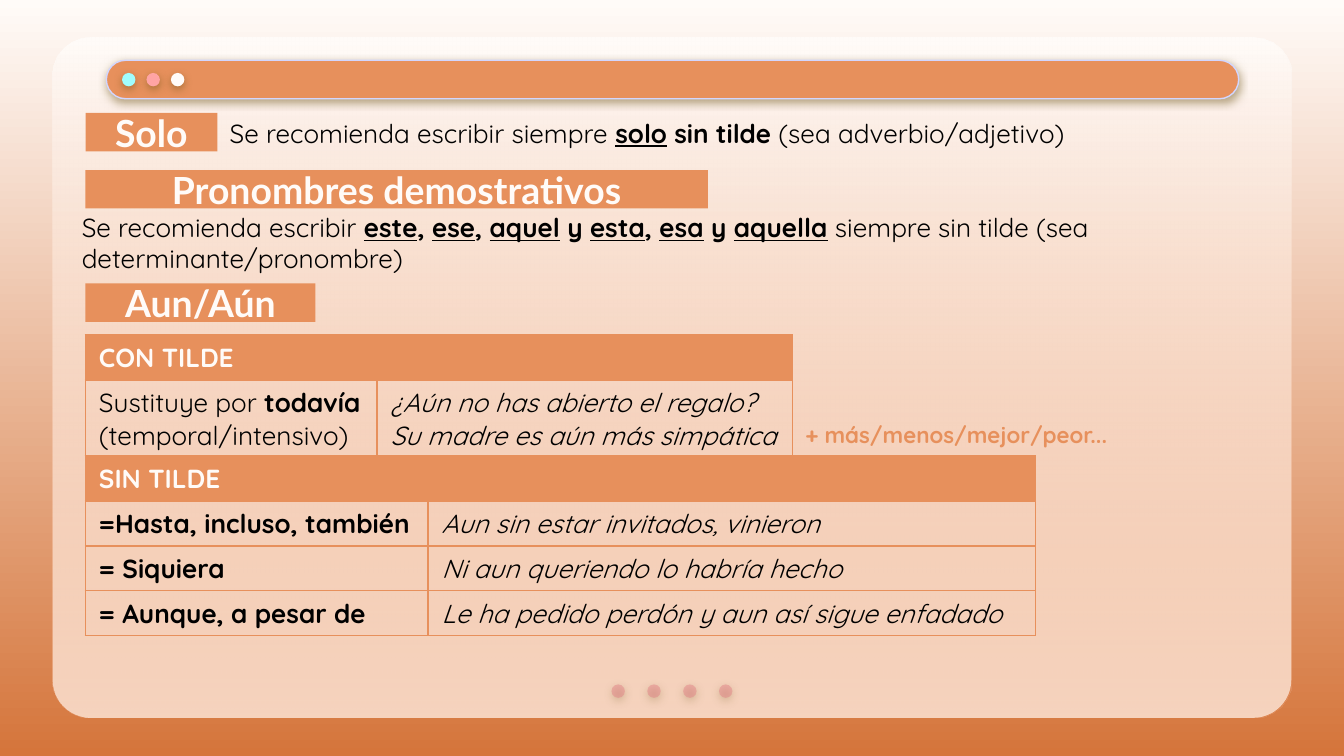
import pptx
import pptx.dml.color
import pptx.enum.shapes
import pptx.enum.text
import pptx.oxml
import pptx.util

Pt = pptx.util.Pt
RGB = pptx.dml.color.RGBColor.from_string
SHAPES = pptx.enum.shapes.MSO_SHAPE
TEXT = pptx.enum.text
NS = 'xmlns:a="http://schemas.openxmlformats.org/drawingml/2006/main"'
COLORS = {"cream": "FFFBF8", "orange": "E7905C", "rust": "D5753B", "rose": "E27B83",
          "cyan": "A0FDFD", "pink": "FFA4A4", "lilac": "D2D6FF", "brown": "6D5416",
          "black": "000000"}
STYLES = {"b": "bold", "i": "italic", "u": "underline"}
SHADOW = (f'<a:effectLst {NS}><a:outerShdw blurRad="57150" dist="19050" dir="5400000" '
          f'algn="bl" rotWithShape="0"><a:srgbClr val="{COLORS["brown"]}">'
          '<a:alpha val="50000"/></a:srgbClr></a:outerShdw></a:effectLst>')

prs = pptx.Presentation()
prs.slide_width, prs.slide_height = Pt(720), Pt(405)
slide = prs.slides.add_slide(prs.slide_layouts[6])


def add_block(kind, box, color, shadow=False, alpha=None):
    block = slide.shapes.add_shape(kind, *map(Pt, box))
    block.fill.solid()
    block.fill.fore_color.rgb = RGB(COLORS[color])
    block.line.fill.background()
    if alpha:
        tint = block._element.spPr.find(".//{*}srgbClr")
        tint.append(pptx.oxml.parse_xml(f'<a:alpha {NS} val="{alpha * 1000}"/>'))
    if shadow:
        block._element.spPr.append(pptx.oxml.parse_xml(SHADOW))
    else:
        block.shadow.inherit = False
    return block


def write(frame, paragraphs, color="black", size=14, font="Quicksand"):
    """Each paragraph is a list of (text, style letters)."""
    for number, runs in enumerate(paragraphs):
        paragraph = frame.paragraphs[0] if number == 0 else frame.add_paragraph()
        for text, letters in runs:
            run = paragraph.add_run()
            run.text = text
            run.font.color.rgb = RGB(COLORS[color])
            looks = {"size": Pt(size), "name": font}
            looks.update((STYLES[letter], True) for letter in letters)
            for name, value in looks.items():
                setattr(run.font, name, value)


# Background and window panel
panel_box = (28.2, 20.1, 663.6, 364.5)
panels = [add_block(SHAPES.ROUNDED_RECTANGLE, panel_box, "cream") for _ in range(2)]
for panel in panels:
    panel.adjustments[0] = 0.056
glow = panels[1]
for fill, end in ((slide.background.fill, "rust"), (glow.fill, "orange")):
    fill.gradient()
    fill.gradient_angle = 270
    for stop, color in zip(fill.gradient_stops, ("cream", end)):
        stop.color.rgb = RGB(COLORS[color])
glow_end = glow._element.spPr.findall(".//{*}srgbClr")[-1]
glow_end.append(pptx.oxml.parse_xml(f'<a:alpha {NS} val="37000"/>'))

# Page dots, title bar and window buttons
for step in range(4):
    add_block(SHAPES.OVAL, (327.6 + 19.2 * step, 366.7, 7.2, 7.2), "rose", True, 44)
title_bar = add_block(SHAPES.ROUNDED_RECTANGLE, (57, 32.3, 606.6, 20.6), "orange", True)
title_bar.adjustments[0] = 0.5
title_bar.line.color.rgb = RGB(COLORS["lilac"])
title_bar.line.width = Pt(0.75)
for step, color in enumerate(("cyan", "pink", "cream")):
    add_block(SHAPES.OVAL, (65.4 + 13.1 * step, 39.1, 7.2, 7.2), color, True)

# Section headings
for heading, top, width in (("Solo", 60.5, 70.6),
                            ("Pronombres demostrativos", 91.1, 333.4),
                            ("Aun/Aún", 151.8, 123.2)):
    frame = add_block(SHAPES.RECTANGLE, (45.8, top, width, 20.6), "orange").text_frame
    layout = {"vertical_anchor": TEXT.MSO_ANCHOR.MIDDLE, "word_wrap": True}
    layout.update((f"margin_{side}", Pt(7.2)) for side in ("left", "top", "right", "bottom"))
    for name, value in layout.items():
        setattr(frame, name, value)
    write(frame, [[(heading, "b")]], "cream", 20, "Lato")
    frame.paragraphs[0].alignment = TEXT.PP_ALIGN.CENTER

# Rules and side note
solo_rule = [("Se recomienda escribir siempre ", ""), ("solo", "bu"), (" sin tilde", "b"),
             (" (sea adverbio/adjetivo)", "")]
pronoun_rule = [("Se recomienda escribir ", "")]
for pronoun, joint in (("este", ", "), ("ese", ", "), ("aquel", " y "),
                       ("esta", ", "), ("esa", " y "), ("aquella", " ")):
    pronoun_rule += [(pronoun, "bu"), (joint, "b")]
pronoun_rule.append(("siempre sin tilde (sea determinante/pronombre)", ""))
side_note = [("+ más/menos/mejor/peor...", "b")]
for box, runs, wrap, color, size in (
        ((116, 59.2, 474.5, 24.2), solo_rule, False, "black", 14),
        ((36.7, 109.7, 618.5, 41.2), pronoun_rule, True, "black", 14),
        ((424.4, 222.3, 180.7, 21.8), side_note, False, "orange", 12)):
    frame = slide.shapes.add_textbox(*map(Pt, box)).text_frame
    frame.word_wrap = wrap
    frame.auto_size = TEXT.MSO_AUTO_SIZE.SHAPE_TO_FIT_TEXT
    write(frame, [runs], color, size)

# Tables: header, top, column widths, row heights, body cells
with_accent = [
    ([[("Sustituye por ", ""), ("todavía", "b"), (" (temporal/intensivo)", "")]],
     [[("¿Aún no has abierto el regalo?", "i")], [("Su madre es aún más simpática", "i")]])]
without_accent = [
    ([[(meaning, "b")]], [[(example, "i")]]) for meaning, example in (
        ("=Hasta, incluso, también", "Aun sin estar invitados, vinieron"),
        ("= Siquiera", "Ni aun queriendo lo habría hecho"),
        ("= Aunque, a pesar de", "Le ha pedido perdón y aun así sigue enfadado"))]
for header, top, widths, heights, body in (
        ("CON TILDE", 179.5, (156.2, 222.5), (24, 40.8), with_accent),
        ("SIN TILDE", 244.3, (183.6, 325.4), (24,) * 4, without_accent)):
    table = slide.shapes.add_table(len(heights), 2, Pt(45.8), Pt(top),
                                   Pt(sum(widths)), Pt(sum(heights))).table
    table.first_row = table.horz_banding = False
    for column, width in zip(table.columns, widths):
        column.width = Pt(width)
    for row, height in zip(table.rows, heights):
        row.height = Pt(height)
    for cell in table.iter_cells():
        for side in ("lnL", "lnR", "lnT", "lnB"):
            cell._tc.get_or_add_tcPr().append(pptx.oxml.parse_xml(
                f'<a:{side} {NS} w="12700"><a:solidFill><a:srgbClr '
                f'val="{COLORS["orange"]}"/></a:solidFill></a:{side}>'))
        cell.fill.background()
    title = table.cell(0, 0)
    title.merge(table.cell(0, 1))
    title.fill.solid()
    title.fill.fore_color.rgb = RGB(COLORS["orange"])
    write(title.text_frame, [[(header, "b")]], "cream")
    for r, row in enumerate(body, 1):
        for c, paragraphs in enumerate(row):
            write(table.cell(r, c).text_frame, paragraphs)

prs.save("out.pptx")
